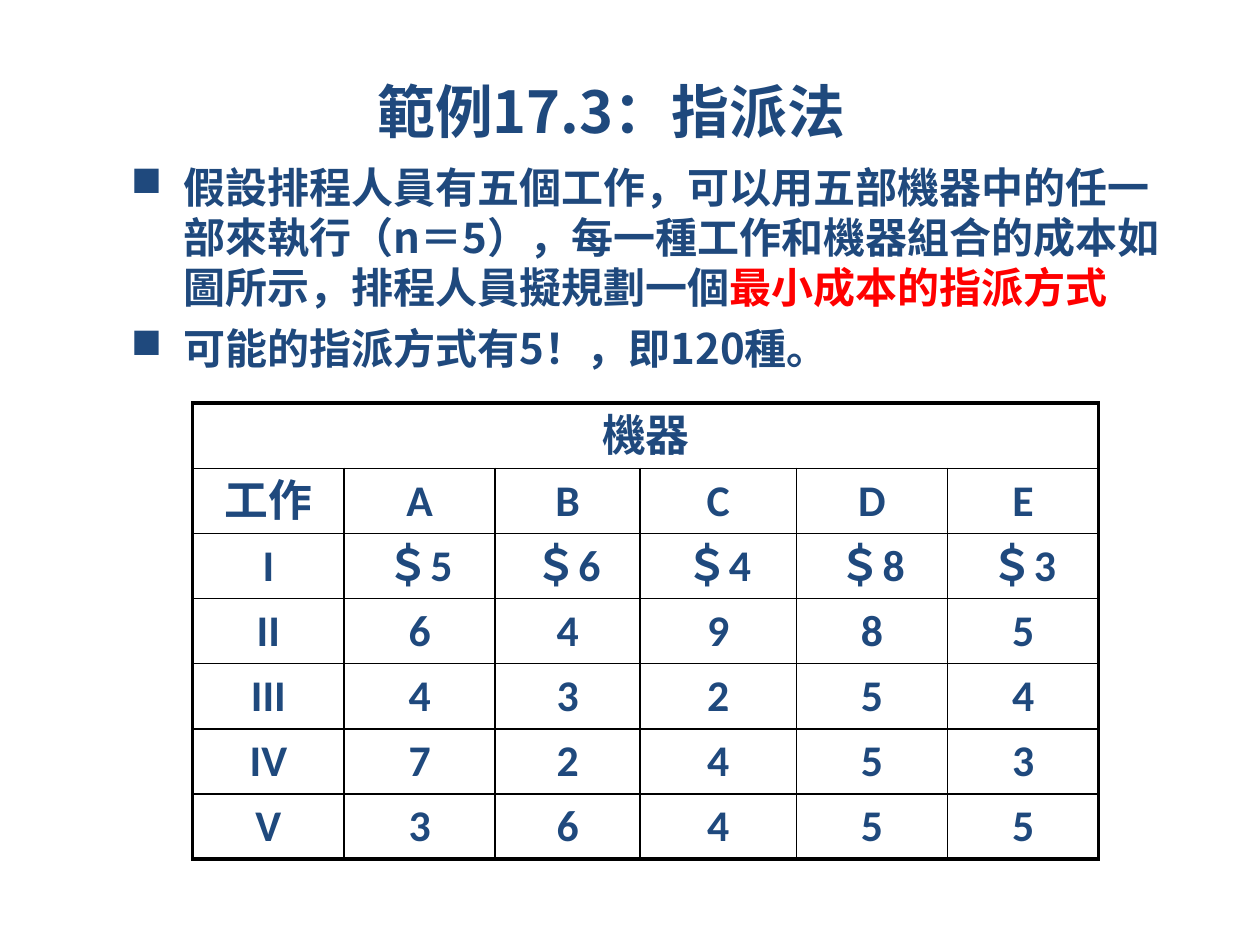
from lxml.etree import SubElement
from pptx import Presentation
from pptx.dml.color import RGBColor
from pptx.enum.text import MSO_ANCHOR, PP_ALIGN
from pptx.oxml.ns import qn
from pptx.util import Inches, Pt

COLORS = {"navy": "1F497D", "red": "FF0000", "line": "000000"}
CJK, LATIN = "Noto Sans CJK SC", "Calibri"


def set_font(para, name, size):
    font = para.font
    font.name, font.size, font.bold = name, Pt(size), True
    font.color.rgb = RGBColor.from_string(COLORS["navy"])
    SubElement(para._p.pPr.find(qn("a:defRPr")), qn("a:ea"), typeface=name)


def draw_border(cell, side, width):
    """Draw one side (L, R, T or B) of a table cell."""
    line = SubElement(cell._tc.get_or_add_tcPr(), qn(f"a:ln{side}"), w=str(Pt(width)))
    SubElement(SubElement(line, qn("a:solidFill")), qn("a:srgbClr"), val=COLORS["line"])


deck = Presentation()
deck.slide_width, deck.slide_height = Inches(10), Inches(7.5)
page = deck.slides.add_slide(deck.slide_layouts[6])

# Title
title = page.shapes.add_textbox(Inches(0.35), Inches(0.52), Inches(9), Inches(0.71)).text_frame
title.word_wrap = True
title.vertical_anchor = MSO_ANCHOR.MIDDLE
title.margin_left = title.margin_right = title.margin_top = title.margin_bottom = Inches(0.05)
para = title.paragraphs[0]
para.text = "範例17.3：指派法"
para.alignment = PP_ALIGN.CENTER
set_font(para, CJK, 33)

# Bullets, each a list of (text, colour) spans
bullets = [
    [("假設排程人員有五個工作，可以用五部機器中的任一部來執行（n＝5），"
      "每一種工作和機器組合的成本如圖所示，排程人員擬規劃一個", "navy"),
     ("最小成本的指派方式", "red")],
    [("可能的指派方式有5！，即120種。", "navy")],
]
body = page.shapes.add_textbox(Inches(0.9), Inches(1.23), Inches(8.58), Inches(1.92)).text_frame
body.word_wrap = True
for index, spans in enumerate(bullets):
    para = body.paragraphs[0] if index == 0 else body.add_paragraph()
    para.space_before = Pt(6 if index else 0)
    props = para._p.get_or_add_pPr()
    props.set("marL", str(Inches(0.46)))
    props.set("indent", str(Inches(-0.42)))
    SubElement(props, qn("a:buChar"), char="■")
    set_font(para, CJK, 24)
    for text, color in spans:
        span = para.add_run()
        span.text = text
        span.font.color.rgb = RGBColor.from_string(COLORS[color])

# Cost table
rows = [
    ["機器", "", "", "", "", ""],
    ["工作", "A", "B", "C", "D", "E"],
    ["I", "＄5", "＄6", "＄4", "＄8", "＄3"],
    ["II", "6", "4", "9", "8", "5"],
    ["III", "4", "3", "2", "5", "4"],
    ["IV", "7", "2", "4", "5", "3"],
    ["V", "3", "6", "4", "5", "5"],
]
widths = [1.2, 1.2, 1.15, 1.24, 1.2, 1.2]
last_row, last_col = len(rows) - 1, len(widths) - 1
table = page.shapes.add_table(len(rows), len(widths), Inches(1.53), Inches(3.2),
                              Inches(sum(widths)), Inches(3.62)).table
table.first_row = table.horz_banding = False
for column, width in zip(table.columns, widths):
    column.width = Inches(width)
table.cell(0, 0).merge(table.cell(0, last_col))

for r, values in enumerate(rows):
    for c, value in enumerate(values):
        cell = table.cell(r, c)
        outer = {"L": c == 0 or r == 0, "R": c == last_col or r == 0,
                 "T": r == 0, "B": r == last_row}
        for side, is_outer in outer.items():
            draw_border(cell, side, 2.25 if is_outer else 1)
        cell.fill.background()
        para = cell.text_frame.paragraphs[0]
        para.text = value
        para.alignment = PP_ALIGN.CENTER
        set_font(para, LATIN, 25)

deck.save("out.pptx")
